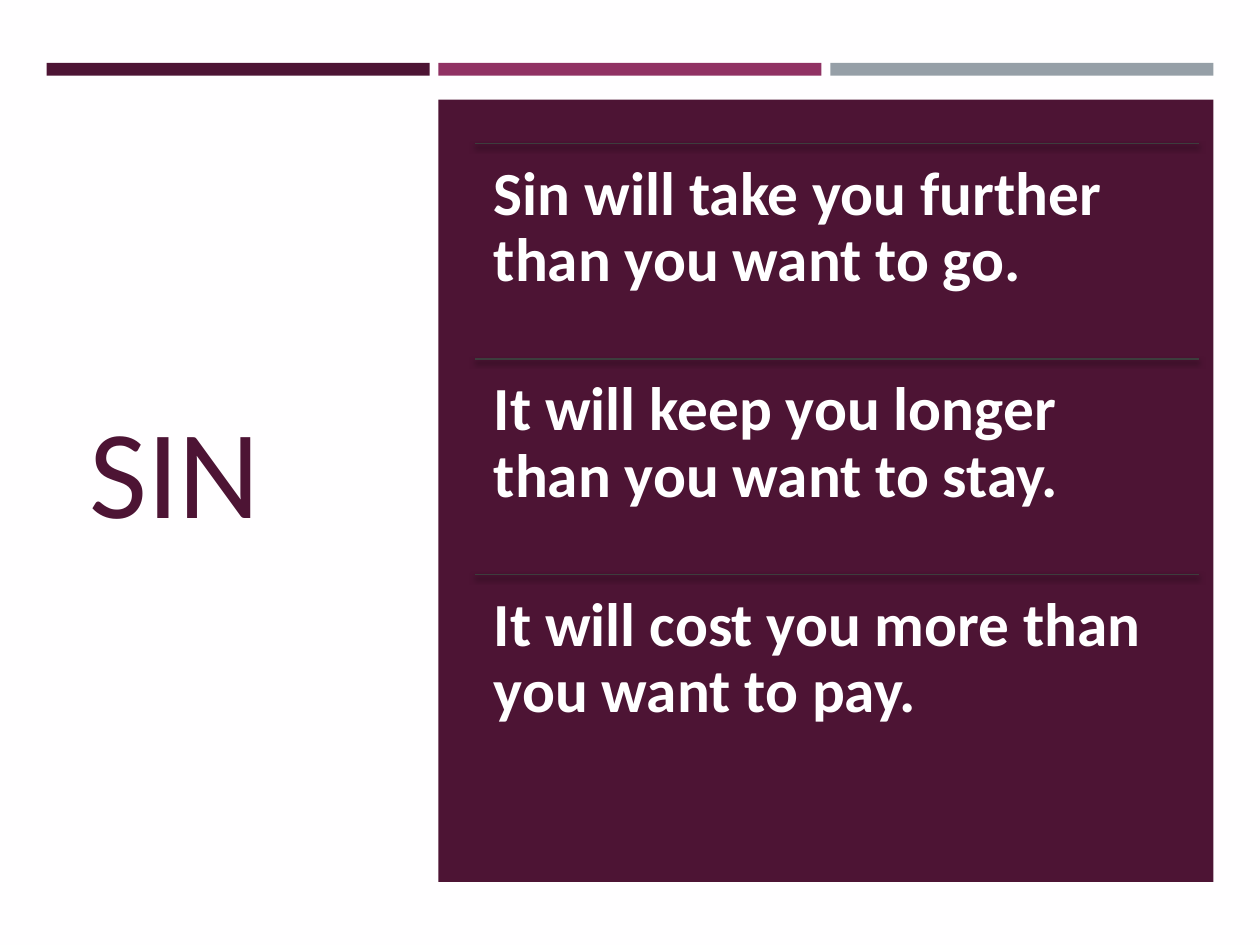
from dataclasses import dataclass

from lxml.etree import SubElement
from pptx import Presentation
from pptx.dml.color import RGBColor
from pptx.enum.shapes import MSO_CONNECTOR, MSO_SHAPE
from pptx.enum.text import MSO_ANCHOR
from pptx.oxml.ns import qn
from pptx.util import Inches, Pt

COLORS = {
    "paper": "FFFEFF",
    "plum": "4D1434",
    "magenta": "903163",
    "gray": "969FA7",
    "rule": "3D3D3D",
    "white": "FFFFFF",
    "shadow": "000000",
}
FONT = "Calibri"
PAGE_WIDTH, PAGE_HEIGHT = 10, 7.5

# Three columns carry the top bars; the panel spans the last two.
COLUMN_LEFT, COLUMN_STEP, COLUMN_WIDTH = 0.37, 3.11, 3.04
BAR_TOP, BAR_HEIGHT = 0.5, 0.1
BAR_COLORS = ("plum", "magenta", "gray")

# Equal rows hold one statement each, with a rule along the top.
ROW_LEFT, ROW_TOP, ROW_WIDTH, ROW_HEIGHT = 3.77, 1.14, 5.75, 1.71
STATEMENTS = (
    "Sin will take you further than you want to go.",
    "It will keep you longer than you want to stay.",
    "It will cost you more than you want to pay.",
)


@dataclass(frozen=True)
class Area:
    left: float
    top: float
    width: float
    height: float

    def lengths(self) -> tuple:
        return tuple(Inches(n) for n in (self.left, self.top, self.width, self.height))


@dataclass(frozen=True)
class TextStyle:
    size: float
    color: str
    bold: bool
    inset: float
    anchor: MSO_ANCHOR
    line_spacing: float = 1.0


TITLE = TextStyle(72, "plum", False, 0.1, MSO_ANCHOR.MIDDLE)
STATEMENT = TextStyle(35, "white", True, 0.15, MSO_ANCHOR.TOP, 0.9)


def rgb(name: str) -> RGBColor:
    return RGBColor.from_string(COLORS[name])


def add_block(shapes, area: Area, color: str) -> None:
    block = shapes.add_shape(MSO_SHAPE.RECTANGLE, *area.lengths())
    block.shadow.inherit = False
    block.fill.solid()
    block.fill.fore_color.rgb = rgb(color)
    block.line.fill.background()


def add_text(shapes, area: Area, text: str, style: TextStyle) -> None:
    box = shapes.add_textbox(*area.lengths())
    frame = box.text_frame
    frame.word_wrap = True
    frame.vertical_anchor = style.anchor
    frame.margin_left = frame.margin_right = Inches(style.inset)
    frame.margin_top = frame.margin_bottom = Inches(style.inset)
    frame.text = text
    para = frame.paragraphs[0]
    para.line_spacing = style.line_spacing
    font = para.runs[0].font
    font.name = FONT
    font.size = Pt(style.size)
    font.bold = style.bold
    font.color.rgb = rgb(style.color)


def add_rule(shapes, area: Area) -> None:
    """Draw a softly shadowed line along the top edge of the area."""
    left, top, width, _ = area.lengths()
    rule = shapes.add_connector(MSO_CONNECTOR.STRAIGHT, left, top, left + width, top)
    rule.line.color.rgb = rgb("rule")
    rule.line.width = Pt(1)
    effects = SubElement(rule._element.spPr, qn("a:effectLst"))
    shadow = SubElement(
        effects, qn("a:outerShdw"), blurRad=str(Pt(3)), dist=str(Pt(2)),
        dir="5400000", rotWithShape="0",
    )
    tint = SubElement(shadow, qn("a:srgbClr"), val=COLORS["shadow"])
    SubElement(tint, qn("a:alpha"), val="55000")


def main() -> None:
    deck = Presentation()
    deck.slide_width, deck.slide_height = Inches(PAGE_WIDTH), Inches(PAGE_HEIGHT)
    page = deck.slides.add_slide(deck.slide_layouts[6])

    add_block(page.shapes, Area(0, 0, PAGE_WIDTH, PAGE_HEIGHT), "paper")
    add_text(page.shapes, Area(0.61, 1.14, 2.5, 5.15), "SIN", TITLE)

    for column, color in enumerate(BAR_COLORS):
        left = COLUMN_LEFT + column * COLUMN_STEP
        add_block(page.shapes, Area(left, BAR_TOP, COLUMN_WIDTH, BAR_HEIGHT), color)
    panel = Area(COLUMN_LEFT + COLUMN_STEP, 0.79, COLUMN_STEP + COLUMN_WIDTH, 6.21)
    add_block(page.shapes, panel, "plum")

    group = page.shapes.add_group_shape()
    for row, statement in enumerate(STATEMENTS):
        area = Area(ROW_LEFT, ROW_TOP + row * ROW_HEIGHT, ROW_WIDTH, ROW_HEIGHT)
        add_rule(group.shapes, area)
        add_text(group.shapes, area, statement, STATEMENT)

    deck.save("out.pptx")


if __name__ == "__main__":
    main()
